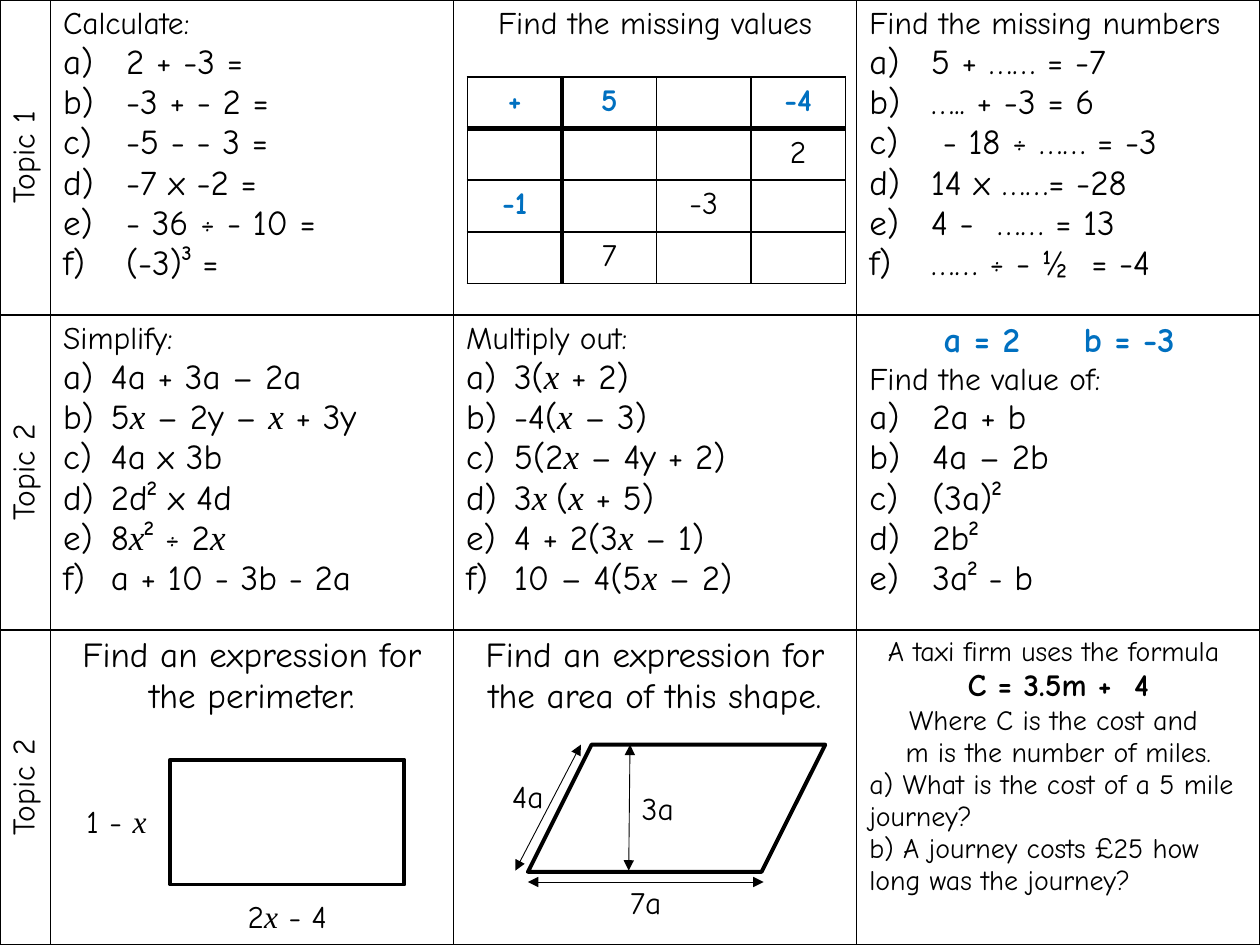
from lxml import etree
from pptx import Presentation
from pptx.dml.color import RGBColor
from pptx.enum.shapes import MSO_CONNECTOR, MSO_SHAPE
from pptx.enum.text import MSO_AUTO_SIZE, PP_ALIGN
from pptx.oxml.ns import qn
from pptx.util import Inches, Pt

BLACK = RGBColor(0x00, 0x00, 0x00)
BLUE = RGBColor(0x00, 0x70, 0xC0)
LEFT, MID = PP_ALIGN.LEFT, PP_ALIGN.CENTER
RECT, SLANT = MSO_SHAPE.RECTANGLE, MSO_SHAPE.PARALLELOGRAM
LINE = MSO_CONNECTOR.STRAIGHT
GROW = MSO_AUTO_SIZE.SHAPE_TO_FIT_TEXT
FONT, MATH = "Comic Neue", "Times New Roman"
WIDE, HIGH = 10, 7.5


def par(text, size=18, align=LEFT, **extra):
    """Describe a paragraph; parts between asterisks are algebra letters."""
    return dict(text=text, size=size, align=align, **extra)


def quiz(head, step, *items):
    """Describe a heading followed by lettered questions indented by step."""
    return [*head, *(par(item, 20, step=step) for item in items)]


TOPICS = ["Topic 1", "Topic 2", "Topic 2"]
TASKS = [
    [
        quiz([par("Calculate:")], 0.5, "2 + -3 =", "-3 + - 2 =", "-5 - - 3 =",
             "-7 x -2 =", "- 36 ÷ - 10 =", "(-3)³ ="),
        [par("Find the missing values", 18, MID)],
        quiz([par("Find the missing numbers")], 0.49, "5 + …… = -7",
             "….. + -3 = 6", " - 18 ÷ …… = -3", "14 x ……= -28",
             "4 -  …… = 13", "…… ÷ - ½  = -4"),
    ],
    [
        quiz([par("Simplify:")], 0.38, "4a + 3a – 2a",
             "5*x* – 2y – *x* + 3y", "4a x 3b", "2d² x 4d",
             "8*x*² ÷ 2*x*", "a + 10 - 3b - 2a"),
        quiz([par("Multiply out:")], 0.38, "3(*x* + 2)", "-4(*x* – 3)",
             "5(2*x* – 4y + 2)", "3*x *(*x* + 5)", "4 + 2(3*x* – 1)",
             "10 – 4(5*x* – 2)"),
        quiz([par("\ta = 2\tb = -3", 20, bold=True, color=BLUE,
                  tabs=(0.59, 1.7)),
              par("Find the value of:")],
             0.5, "2a + b", "4a – 2b", "(3a)²", "2b²", "3a² - b"),
    ],
    [
        [par("Find an expression for the perimeter.", 20, MID)],
        [par("Find an expression for the area of this shape.", 20, MID)],
        [par("A taxi firm uses the formula ", 16, MID),
         par("C = 3.5m +  4", 18, MID, bold=True),
         par("Where C is the cost and ", 16, MID),
         par("m is the number of miles.", 16, MID),
         par("a) What is the cost of a 5 mile journey?", 16),
         par("b) A journey costs £25 how long was the journey?", 16)],
    ],
]
SUMS = [
    ["+", "5", "", "-4"],
    ["", "", "", "2"],
    ["-1", "", "-3", ""],
    ["", "7", "", ""],
]

# Each diagram: outline (shape, box), labels (text, box), arrows (from, to)
BOX = dict(
    outline=(RECT, (1.35, 6.03, 1.86, 0.99)),
    labels=[("2*x* - 4", (1.35, 7.07, 1.86, 0.4)),
            ("1 - *x*", (0.4, 6.32, 1.05, 0.4))],
    arrows=[],
)
KITE = dict(
    outline=(SLANT, (4.19, 5.91, 2.36, 1.01)),
    labels=[("7a", (4.19, 6.96, 1.87, 0.4)),
            ("4a", (3.93, 6.12, 0.52, 0.4)),
            ("3a", (4.96, 6.21, 0.52, 0.4))],
    arrows=[((4.99, 6.91), (5, 5.91)),
            ((4.19, 7), (6.06, 7)),
            ((4.09, 6.91), (4.61, 5.91))],
)


def inch(nums):
    return [Inches(num) for num in nums]


def write(frame, pars):
    for i, item in enumerate(pars):
        p = frame.paragraphs[0] if i == 0 else frame.add_paragraph()
        p.alignment = item["align"]
        props = p._p.get_or_add_pPr()
        if "step" in item:
            step = Inches(item["step"])
            props.set("marL", str(step))
            props.set("indent", str(-step))
            etree.SubElement(props, qn("a:buFont"), typeface="+mj-lt")
            etree.SubElement(props, qn("a:buAutoNum"), type="alphaLcParenR")
        if "tabs" in item:
            stops = etree.SubElement(props, qn("a:tabLst"))
            for pos in inch(item["tabs"]):
                etree.SubElement(stops, qn("a:tab"), pos=str(pos), algn="l")
        for j, part in enumerate(item["text"].split("*")):
            if not part:
                continue
            run = p.add_run()
            run.text = part
            font = run.font
            font.name = MATH if j % 2 else FONT
            font.italic = bool(j % 2)
            font.size = Pt(item["size"])
            font.bold = item.get("bold", False)
            font.color.rgb = item.get("color", BLACK)


def frame_cell(cell, thick=""):
    """Border a cell; sides named in thick (L, R, T, B) get a heavy line."""
    props = cell._tc.get_or_add_tcPr()
    for side in "LRTB":
        width = Pt(3 if side in thick else 1)
        line = etree.SubElement(props, qn("a:ln" + side), w=str(width))
        fill = etree.SubElement(line, qn("a:solidFill"))
        etree.SubElement(fill, qn("a:srgbClr"), val=str(BLACK))
    cell.fill.background()


def add_grid(shapes, box, cols, rows):
    table = shapes.add_table(len(rows), len(cols), *inch(box)).table
    table.first_row = table.horz_banding = False
    for col, size in zip(table.columns, cols):
        col.width = Inches(size)
    for row, size in zip(table.rows, rows):
        row.height = Inches(size)
    return table


def add_tasks(shapes):
    side = 0.4
    cols = [side] + [(WIDE - side) / 3] * 3
    table = add_grid(shapes, (0, 0, WIDE, HIGH), cols, [HIGH / 3] * 3)
    for r, (topic, tasks) in enumerate(zip(TOPICS, TASKS)):
        for c, pars in enumerate([[par(topic, 18, MID)], *tasks]):
            cell = table.cell(r, c)
            write(cell.text_frame, pars)
            frame_cell(cell)
        table.cell(r, 0)._tc.tcPr.set("vert", "vert270")


def add_sums(shapes):
    table = add_grid(shapes, (3.71, 0.61, 3.01, 1.64), [0.75] * 4, [0.41] * 4)
    for r, row in enumerate(SUMS):
        for c, text in enumerate(row):
            cell = table.cell(r, c)
            head = r == 0 or c == 0
            write(cell.text_frame, [par(text, 18, MID, bold=head,
                                        color=BLUE if head else BLACK)])
            frame_cell(cell, {0: "B", 1: "T"}.get(r, "")
                       + {0: "R", 1: "L"}.get(c, ""))


def add_figure(shapes, outline, labels, arrows):
    group = shapes.add_group_shape().shapes
    kind, box = outline
    shape = group.add_shape(kind, *inch(box))
    if kind == SLANT:
        shape.adjustments[0] = 0.5
    shape.shadow.inherit = False
    shape.fill.background()
    shape.line.color.rgb = BLACK
    shape.line.width = Pt(2.25)
    for start, end in arrows:
        arrow = group.add_connector(LINE, *inch(start + end))
        arrow.line.color.rgb = BLACK
        arrow.line.width = Pt(0.5)
        line = arrow.line._get_or_add_ln()
        for tip in ("a:headEnd", "a:tailEnd"):
            etree.SubElement(line, qn(tip), type="triangle")
        etree.SubElement(arrow._element.spPr, qn("a:effectLst"))
    for text, box in labels:
        frame = group.add_textbox(*inch(box)).text_frame
        frame.word_wrap = True
        frame.auto_size = GROW
        write(frame, [par(text, 18, MID)])


def main():
    deck = Presentation()
    deck.slide_width, deck.slide_height = inch((WIDE, HIGH))
    shapes = deck.slides.add_slide(deck.slide_layouts[6]).shapes
    add_tasks(shapes)
    add_sums(shapes)
    for figure in (BOX, KITE):
        add_figure(shapes, **figure)
    deck.save("out.pptx")


if __name__ == "__main__":
    main()
